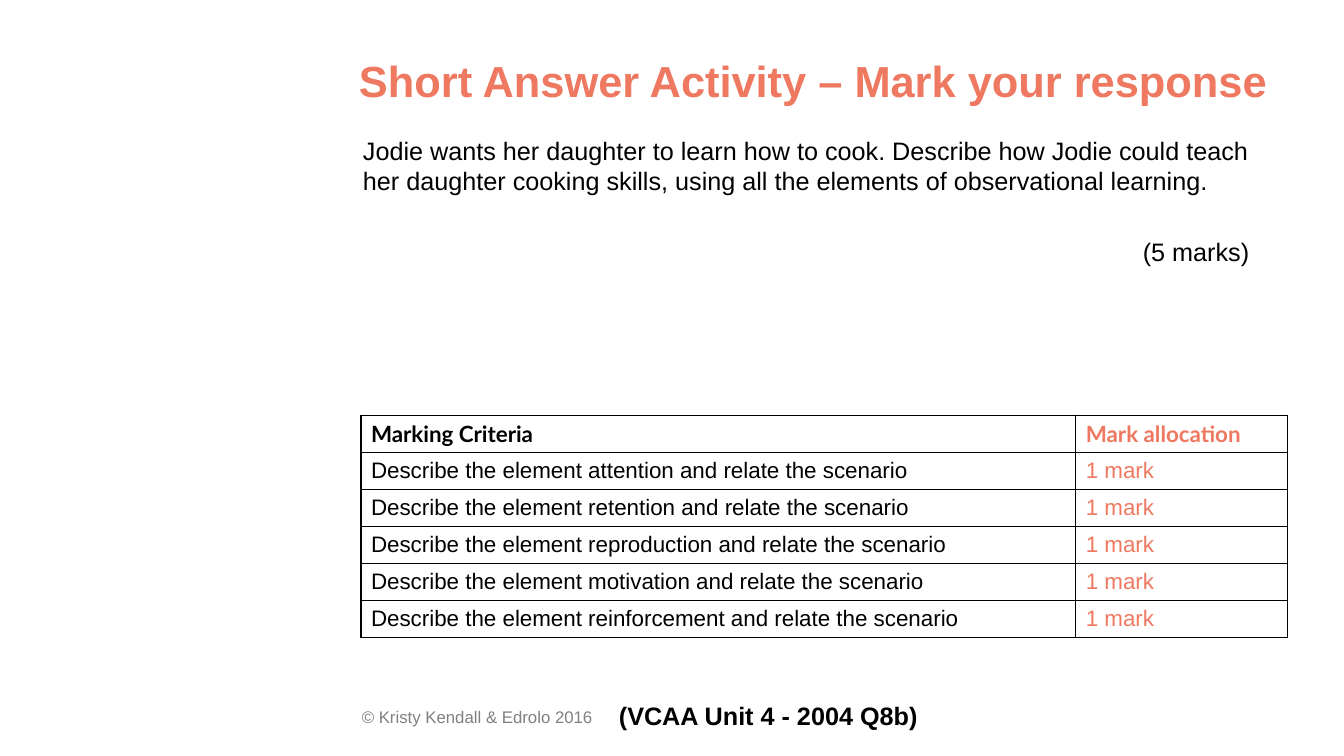
from lxml.etree import SubElement
from pptx import Presentation
from pptx.dml.color import RGBColor
from pptx.enum.text import MSO_ANCHOR, PP_ALIGN
from pptx.oxml.ns import qn
from pptx.util import Inches, Pt

BLACK = "000000"
CORAL = "EE7860"
GREY = "808080"
WHITE = "FFFFFF"


def color(value):
    return RGBColor.from_string(value)


class ActivitySlide:
    body_font = "Arial"
    header_font = "Lato"

    def __init__(self, deck):
        self.slide = deck.slides.add_slide(deck.slide_layouts[6])

    def style(self, para, size, tint=BLACK, bold=False, font=body_font):
        for span in para.runs:
            span.font.name = font
            span.font.size = Pt(size)
            span.font.bold = bold
            span.font.color.rgb = color(tint)

    def text(self, left, top, width, height, lines, size, tint=BLACK,
             bold=False, wrap=True, insets=(0.1, 0.05)):
        box = self.slide.shapes.add_textbox(
            Inches(left), Inches(top), Inches(width), Inches(height))
        frame = box.text_frame
        frame.word_wrap = wrap
        frame.margin_left = frame.margin_right = Inches(insets[0])
        frame.margin_top = frame.margin_bottom = Inches(insets[1])
        frame.text = "\n".join(lines)
        for para in frame.paragraphs:
            self.style(para, size, tint, bold)
        return frame

    def border(self, cell):
        properties = cell._tc.get_or_add_tcPr()
        for position, side in enumerate(("a:lnL", "a:lnR", "a:lnT", "a:lnB")):
            line = SubElement(properties, qn(side), w=str(Pt(1)))
            fill = SubElement(line, qn("a:solidFill"))
            SubElement(fill, qn("a:srgbClr"), val=BLACK)
            properties.remove(line)
            properties.insert(position, line)

    def table(self, left, top, widths, heights, rows, tints):
        table = self.slide.shapes.add_table(
            len(rows), len(widths), Inches(left), Inches(top),
            Inches(sum(widths)), Inches(sum(heights))).table
        table.horz_banding = False
        for column, width in zip(table.columns, widths):
            column.width = Inches(width)
        for row, height in zip(table.rows, heights):
            row.height = Inches(height)
        for row_index, values in enumerate(rows):
            header = row_index == 0
            font = self.header_font if header else self.body_font
            for column_index, value in enumerate(values):
                cell = table.cell(row_index, column_index)
                cell.text_frame.text = value
                cell.vertical_anchor = MSO_ANCHOR.MIDDLE
                cell.fill.solid()
                cell.fill.fore_color.rgb = color(WHITE)
                self.style(cell.text_frame.paragraphs[0], 16,
                           tints[column_index], header, font)
                self.border(cell)


def main():
    deck = Presentation()
    deck.slide_width = Inches(13.33)
    deck.slide_height = Inches(7.5)
    page = ActivitySlide(deck)

    question = page.text(3.53, 1.3, 9, 2.2, [
        "Jodie wants her daughter to learn how to cook. Describe how Jodie "
        "could teach her daughter cooking skills, using all the elements of "
        "observational learning.",
        "(5 marks) "], 18, insets=(0.07, 0.04))
    marks = question.paragraphs[1]
    marks.alignment = PP_ALIGN.RIGHT
    marks.space_before = Pt(29)

    page.text(3.49, 6.96, 4.5, 0.4, ["© Kristy Kendall & Edrolo 2016"], 12, GREY)
    page.text(3.49, 0.5, 9.61, 0.83,
              ["Short Answer Activity – Mark your response"],
              31, CORAL, True, insets=(0.07, 0.04))
    page.text(6.04, 6.9, 3.26, 0.4, ["(VCAA Unit 4 - 2004 Q8b)"],
              18, bold=True, wrap=False)

    elements = ("attention", "retention", "reproduction", "motivation",
                "reinforcement")
    criteria = [("Marking Criteria", "Mark allocation")]
    criteria += [(f"Describe the element {element} and relate the scenario",
                  "1 mark") for element in elements]
    heights = [0.37] + [0.367] * len(elements)
    page.table(3.58, 4.12, (7.09, 2.1), heights, criteria, (BLACK, CORAL))

    deck.save("out.pptx")


if __name__ == "__main__":
    main()
